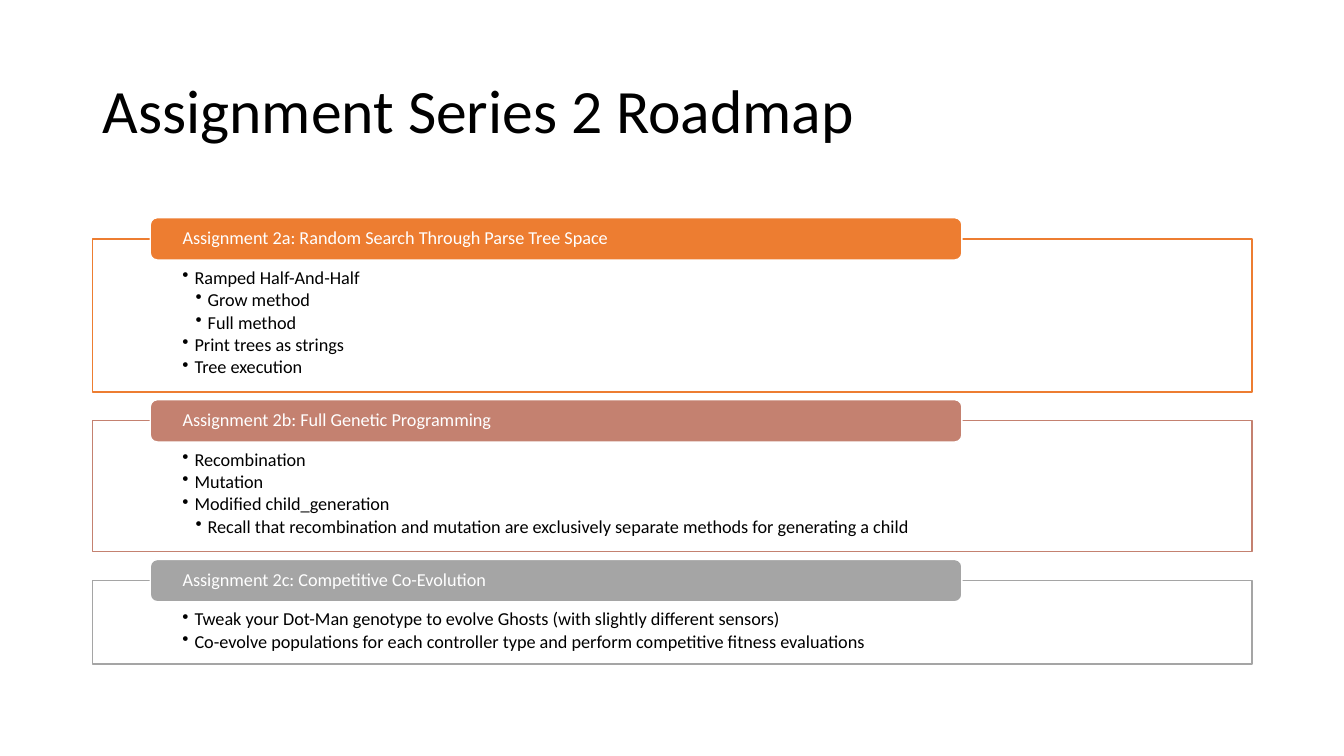
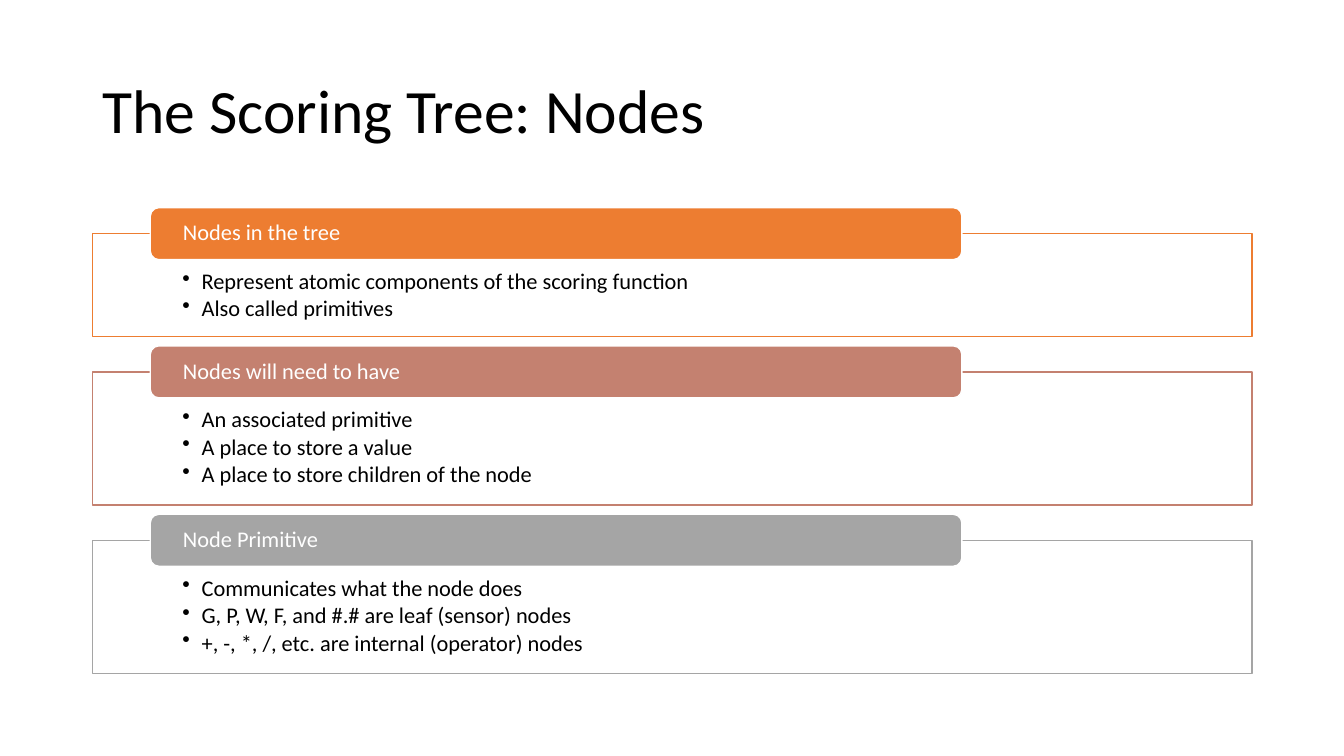
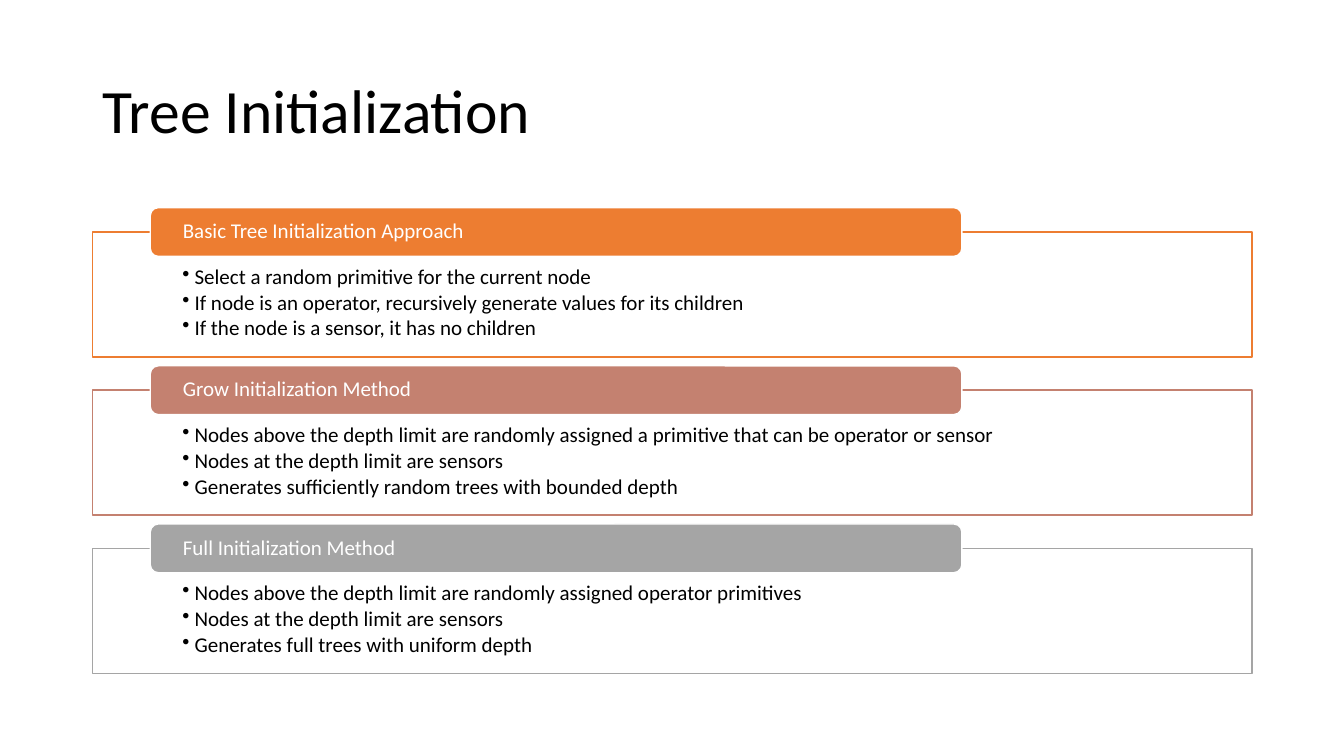
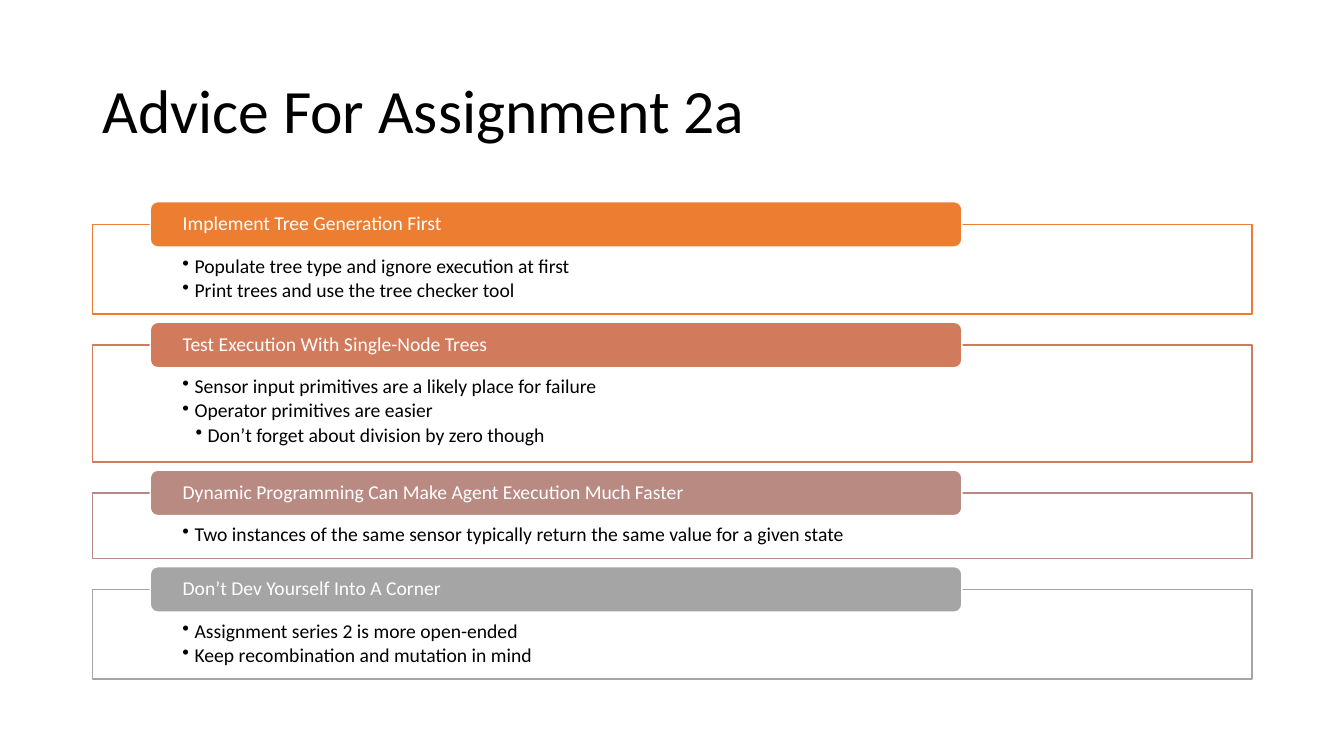
"""Build four slides of titled, framed bullet lists."""
from dataclasses import dataclass
from typing import Any

from lxml import etree
from pptx import Presentation
from pptx.dml.color import RGBColor
from pptx.enum.shapes import MSO_SHAPE
from pptx.enum.text import MSO_ANCHOR, PP_ALIGN
from pptx.oxml.ns import qn
from pptx.util import Inches, Pt

RECT, ROUND = MSO_SHAPE.RECTANGLE, MSO_SHAPE.ROUNDED_RECTANGLE
TOP, MIDDLE = MSO_ANCHOR.TOP, MSO_ANCHOR.MIDDLE
LEFT = PP_ALIGN.LEFT
FONT = "Calibri"
COLORS = {
    "text": "000000", "white": "FFFFFF", "orange": "ED7D31",
    "rust": "D17B5C", "clay": "C48170", "rose": "B98A82", "gray": "A5A5A5",
}
EDGE, WIDTH = 0.92, 11.5
TAB_X, TAB_W = 1.49, 8.05
OPACITY = "90000"


@dataclass
class Item:
    """A bullet and its level."""
    text: str
    level: int = 1


@dataclass
class Panel:
    """A framed list under a coloured tab."""
    head: str
    color: str
    height: float
    items: list[Item]


@dataclass
class Page:
    """A slide: title, top of the first tab, text size, bullet indent, panels."""
    title: str
    top: float
    size: int
    indent: float
    panels: list[Panel]


PAGES = [
    Page("Assignment Series 2 Roadmap", 2.16, 13, 0.12, [
        Panel("Assignment 2a: Random Search Through Parse Tree Space", "orange", 1.52, [
            Item("Ramped Half-And-Half"),
            Item("Grow method", 2),
            Item("Full method", 2),
            Item("Print trees as strings"),
            Item("Tree execution"),
        ]),
        Panel("Assignment 2b: Full Genetic Programming", "clay", 1.3, [
            Item("Recombination"),
            Item("Mutation"),
            Item("Modified child_generation"),
            Item("Recall that recombination and mutation are exclusively separate "
                 "methods for generating a child", 2),
        ]),
        Panel("Assignment 2c: Competitive Co-Evolution", "gray", 0.83, [
            Item("Tweak your Dot-Man genotype to evolve Ghosts "
                 "(with slightly different sensors)"),
            Item("Co-evolve populations for each controller type and perform "
                 "competitive fitness evaluations"),
        ]),
    ]),
    Page("The Scoring Tree: Nodes", 2.06, 16, 0.19, [
        Panel("Nodes in the tree", "orange", 1.02, [
            Item("Represent atomic components of the scoring function"),
            Item("Also called primitives"),
        ]),
        Panel("Nodes will need to have", "clay", 1.32, [
            Item("An associated primitive"),
            Item("A place to store a value"),
            Item("A place to store children of the node"),
        ]),
        Panel("Node Primitive", "gray", 1.32, [
            Item("Communicates what the node does"),
            Item("G, P, W, F, and #.# are leaf (sensor) nodes"),
            Item("+, -, *, /, etc. are internal (operator) nodes"),
        ]),
    ]),
    Page("Tree Initialization", 2.06, 15, 0.12, [
        Panel("Basic Tree Initialization Approach", "orange", 1.24, [
            Item("Select a random primitive for the current node"),
            Item("If node is an operator, recursively generate values for its children"),
            Item("If the node is a sensor, it has no children"),
        ]),
        Panel("Grow Initialization Method", "clay", 1.24, [
            Item("Nodes above the depth limit are randomly assigned a primitive "
                 "that can be operator or sensor"),
            Item("Nodes at the depth limit are sensors"),
            Item("Generates sufficiently random trees with bounded depth"),
        ]),
        Panel("Full Initialization Method", "gray", 1.24, [
            Item("Nodes above the depth limit are randomly assigned operator primitives"),
            Item("Nodes at the depth limit are sensors"),
            Item("Generates full trees with uniform depth"),
        ]),
    ]),
    Page("Advice For Assignment 2a", 2, 14, 0.12, [
        Panel("Implement Tree Generation First", "orange", 0.89, [
            Item("Populate tree type and ignore execution at first"),
            Item("Print trees and use the tree checker tool"),
        ]),
        Panel("Test Execution With Single-Node Trees", "rust", 1.16, [
            Item("Sensor input primitives are a likely place for failure"),
            Item("Operator primitives are easier"),
            Item("Don’t forget about division by zero though", 2),
        ]),
        Panel("Dynamic Programming Can Make Agent Execution Much Faster", "rose", 0.65, [
            Item("Two instances of the same sensor typically return the same value "
                 "for a given state"),
        ]),
        Panel("Don’t Dev Yourself Into A Corner", "gray", 0.89, [
            Item("Assignment series 2 is more open-ended"),
            Item("Keep recombination and mutation in mind"),
        ]),
    ]),
]


def rgb(name: str) -> RGBColor:
    """Look up a colour by name."""
    return RGBColor.from_string(COLORS[name])


def apply(target: Any, values: dict[str, Any]) -> None:
    """Set each named attribute on the target."""
    for name, value in values.items():
        setattr(target, name, value)


def set_frame(frame: Any, anchor: Any, side: float, top: float, bottom: float) -> None:
    """Set wrapping, anchor and insets of a text frame."""
    apply(frame, {
        "word_wrap": True, "vertical_anchor": anchor,
        "margin_left": Inches(side), "margin_right": Inches(side),
        "margin_top": Inches(top), "margin_bottom": Inches(bottom),
    })


def write(para: Any, text: str, size: int, color: str) -> None:
    """Write one left-aligned line of text."""
    apply(para, {"alignment": LEFT, "line_spacing": 0.9})
    run = para.add_run()
    run.text = text
    apply(run.font, {"name": FONT, "size": Pt(size)})
    run.font.color.rgb = rgb(color)


def add_bullet(para: Any, item: Item, size: int, indent: float) -> None:
    """Write one bullet with a hanging indent."""
    write(para, item.text, size, "text")
    apply(para, {"level": item.level, "space_after": Pt(size * 0.15)})
    left = indent if item.level == 1 else 0.25
    props = para._p.get_or_add_pPr()
    props.set("marL", str(Inches(left)))
    props.set("indent", str(Inches(-indent)))
    etree.SubElement(props, qn("a:buChar")).set("char", "•")


def add_block(slide: Any, kind: Any, box: tuple[float, ...], fill: str, line: str) -> Any:
    """Add a filled and outlined shape."""
    shape = slide.shapes.add_shape(kind, *map(Inches, box))
    shape.shadow.inherit = False
    shape.fill.solid()
    shape.fill.fore_color.rgb = rgb(fill)
    shape.line.color.rgb = rgb(line)
    shape.line.width = Pt(1)
    return shape


def add_title(slide: Any, text: str) -> None:
    """Add the slide title."""
    box = slide.shapes.add_textbox(*map(Inches, (EDGE, 0.4, WIDTH, 1.45)))
    set_frame(box.text_frame, MIDDLE, 0.1, 0.05, 0.05)
    write(box.text_frame.paragraphs[0], text, 44, "text")


def add_panel(slide: Any, panel: Panel, page: Page, top: float, tall: float) -> None:
    """Add a list frame with its tab centred on the upper edge."""
    box = (EDGE, top + tall / 2, WIDTH, panel.height)
    body = add_block(slide, RECT, box, "white", panel.color)
    tint = body._element.spPr.find(qn("a:solidFill"))[0]
    etree.SubElement(tint, qn("a:alpha")).set("val", OPACITY)
    frame = body.text_frame
    set_frame(frame, TOP, 0.89, tall * 0.7, tall * 0.24)
    for index, item in enumerate(panel.items):
        para = frame.add_paragraph() if index else frame.paragraphs[0]
        add_bullet(para, item, page.size, page.indent)
    tab = add_block(slide, ROUND, (TAB_X, top, TAB_W, tall), panel.color, "white")
    set_frame(tab.text_frame, MIDDLE, 0.3, 0, 0)
    write(tab.text_frame.paragraphs[0], panel.head, page.size, "white")


def add_page(deck: Any, page: Page) -> None:
    """Add a slide and stack its panels at equal gaps."""
    slide = deck.slides.add_slide(deck.slide_layouts[6])
    add_title(slide, page.title)
    tall = page.size / 31
    top = page.top
    for panel in page.panels:
        add_panel(slide, panel, page, top, tall)
        top += tall * 0.68 + panel.height


def main() -> None:
    """Build and save the deck."""
    deck = Presentation()
    apply(deck, {"slide_width": Inches(13.33), "slide_height": Inches(7.5)})
    for page in PAGES:
        add_page(deck, page)
    deck.save("out.pptx")


if __name__ == "__main__":
    main()
